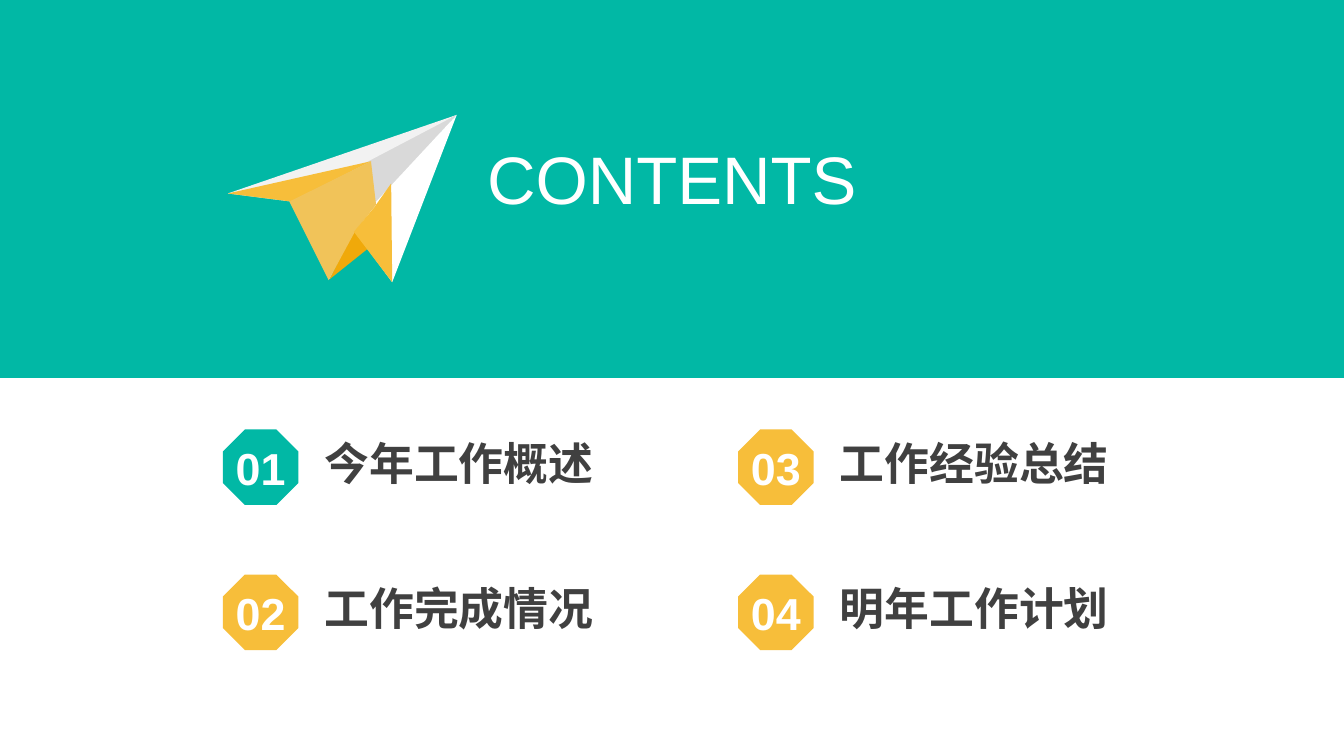
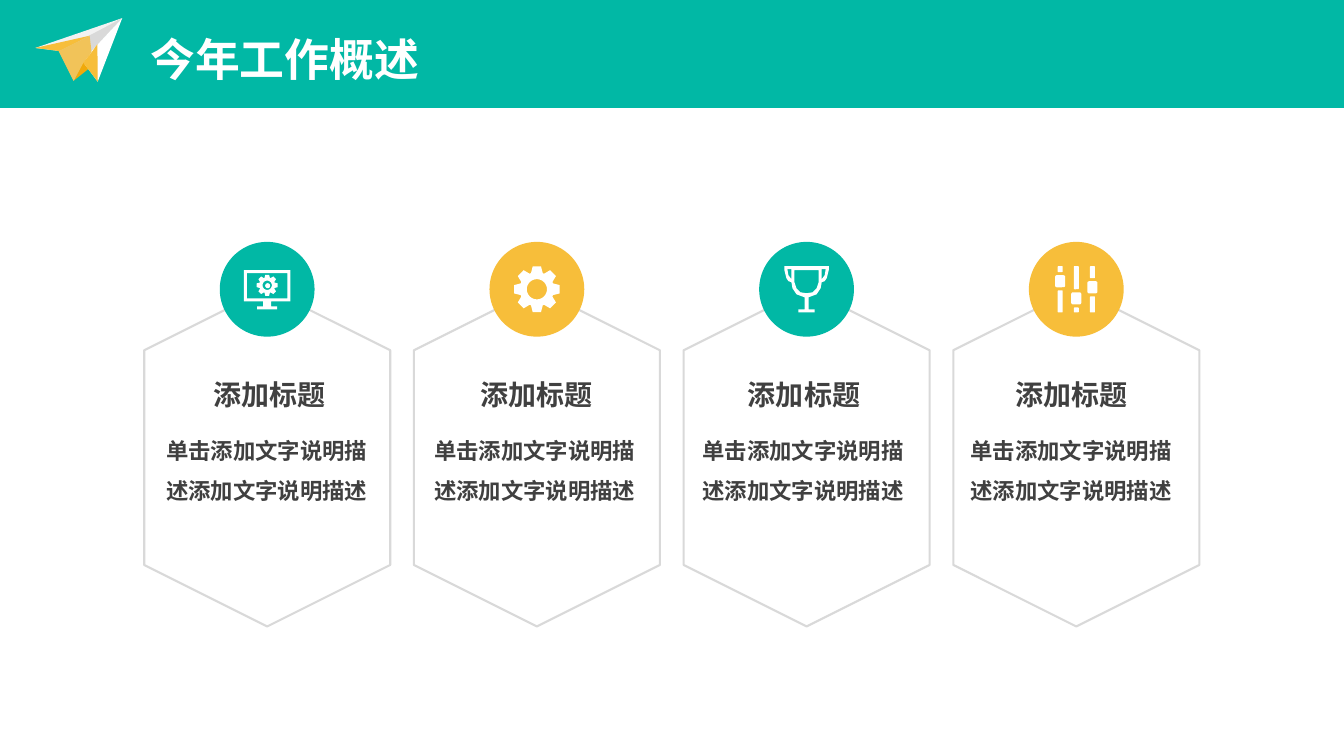
from math import cos, sin, pi
from pptx import Presentation
from pptx.dml.color import RGBColor
from pptx.enum.shapes import MSO_SHAPE
from pptx.enum.text import MSO_ANCHOR, MSO_AUTO_SIZE, PP_ALIGN
from pptx.util import Inches, Pt

HUES = {
    "teal": "01B8A5", "gold": "F7BE3A", "amber": "F0A90A", "sand": "F1C359",
    "white": "FFFFFF", "pale": "F2F2F2", "grey": "D9D9D9", "dark": "404040",
}


def add(shapes, form, hue, box=None, at=(0, 0), zoom=1):
    """Add a preset in a box, or one freeform from a list of outlines."""
    if box:
        shape = shapes.add_shape(form, *map(Inches, box))
    else:
        rings = [[(Inches(at[0] + x * zoom), Inches(at[1] + y * zoom))
                  for x, y in ring] for ring in form]
        pen = shapes.build_freeform(*rings[0][0])
        pen.add_line_segments(rings[0][1:])
        for ring in rings[1:]:
            pen.move_to(*ring[0])
            pen.add_line_segments(ring[1:])
        shape = pen.convert_to_shape()
    shape.shadow.inherit = False
    shape.fill.solid()
    shape.fill.fore_color.rgb = RGBColor.from_string(HUES[hue])
    shape.line.fill.background()
    return shape


def write(shape, text, size, hue, bold=True, align=PP_ALIGN.LEFT, wrap=False):
    frame = shape.text_frame
    frame.text = text
    frame.word_wrap = wrap
    frame.auto_size = MSO_AUTO_SIZE.NONE
    para = frame.paragraphs[0]
    para.alignment = align
    para.font.name = "Arial"
    para.font.size = Pt(size)
    para.font.bold = bold
    para.font.color.rgb = RGBColor.from_string(HUES[hue])
    return para


deck = Presentation()
deck.slide_width, deck.slide_height = Inches(13.33), Inches(7.5)

# Paper plane, in inches from its left end and its tip
PLANE = [
    ("grey", [(2.27, 0), (0.6, 0.81), (1.01, 1.63), (1.26, 1.12)]),
    ("amber", [(1.26, 1.12), (1.01, 1.63), (1.41, 1.31)]),
    ("white", [(2.27, 0), (1.23, 1.12), (1.63, 1.66)]),
    ("pale", [(2.27, 0), (0, 0.78), (0.63, 0.86)]),
    ("gold", [(0.63, 0.86), (1.42, 0.46), (0, 0.78)]),
    ("sand", [(0.61, 0.86), (1.42, 0.46), (1.47, 0.89), (1.26, 1.16),
              (1, 1.64)]),
    ("gold", [(1.25, 1.16), (1.45, 0.92), (1.62, 0.68), (1.63, 1.66)]),
]

# Band, plane and title of each slide
HEADS = [
    ("CONTENTS", 48, False, PP_ALIGN.CENTER, (3.82, 1.31, 5.69, 0.91),
     3.75, (2.26, 1.14), 1),
    ("今年工作概述", 32, True, PP_ALIGN.LEFT, (1.39, 0.26, 2.89, 0.64),
     1.07, (0.35, 0.18), 0.38),
]
for text, size, bold, align, box, tall, at, zoom in HEADS:
    slide = deck.slides.add_slide(deck.slide_layouts[5])
    title = slide.shapes.title
    band = add(slide.shapes, MSO_SHAPE.RECTANGLE, "teal", (0, 0, 13.33, tall))
    title._element.addprevious(band._element)
    title.left, title.top, title.width, title.height = map(Inches, box)
    write(title, text, size, "white", bold, align)
    plane = slide.shapes.add_group_shape()
    for hue, fold in PLANE:
        add(plane.shapes, [fold], hue, at=at, zoom=zoom)
first, second = deck.slides

# Contents list: two columns, filled downwards
shapes = first.shapes
TOPICS = ["今年工作概述", "工作完成情况", "工作经验总结", "明年工作计划"]
for i, topic in enumerate(TOPICS):
    left, top = 2.21 + i // 2 * 5.11, 4.26 + i % 2 * 1.44
    badge = add(shapes, MSO_SHAPE.OCTAGON, "gold" if i else "teal",
                (left, top, 0.75, 0.75))
    write(badge, f"{i + 1:02}", 32, "white", align=PP_ALIGN.CENTER)
    badge.text_frame.vertical_anchor = MSO_ANCHOR.MIDDLE
    label = shapes.add_textbox(*map(Inches, (left + 0.91, top + 0.01,
                                             2.89, 0.64)))
    write(label, topic, 32, "dark")

# Icon outlines, in inches from the centre of their disc
teeth = [(r * cos(k * pi / 4 + turn), r * sin(k * pi / 4 + turn))
         for k in range(8)
         for r, turn in ((0.17, -0.35), (0.23, -0.18), (0.23, 0.18),
                         (0.17, 0.35))]
hole = [(0.1 * cos(k * pi / 16), 0.1 * sin(k * pi / 16)) for k in range(32)]
gear = [teeth, hole]
screen = [
    [(-0.23, -0.19), (0.23, -0.19), (0.23, 0.12), (-0.23, 0.12)],
    [(-0.2, -0.16), (0.2, -0.16), (0.2, 0.09), (-0.2, 0.09)],
    [(-0.04, 0.12), (0.04, 0.12), (0.04, 0.17), (0.1, 0.17), (0.1, 0.2),
     (-0.1, 0.2), (-0.1, 0.17), (-0.04, 0.17)],
]
rim = [(0.22, -0.23), (0.22, -0.19), (0.2, -0.11), (0.18, -0.08),
       (0.15, -0.07), (0.14, -0.01), (0.1, 0.05), (0.02, 0.08), (0.02, 0.2),
       (0.08, 0.2), (0.08, 0.23)]
bowl = [(0.12, -0.19), (0.12, -0.07), (0.1, -0.01), (0.06, 0.03), (0, 0.04)]
grip = [(0.15, -0.2), (0.19, -0.2), (0.18, -0.14), (0.15, -0.1)]
cup = [half + [(-x, y) for x, y in reversed(half)] for half in (rim, bowl)]
cup += [grip, [(-x, y) for x, y in grip]]

# Four cards
shapes = second.shapes
STEP, MID = 2.675, 2.87
spots = [2.65 + i * STEP for i in range(4)]
for x in spots:
    card = add(shapes, MSO_SHAPE.HEXAGON, "white",
               (x - 1.675, 3.32, 3.35, 2.44))
    card.rotation = 90
    card.fill.background()
    card.line.color.rgb = RGBColor.from_string(HUES["grey"])
    card.line.width = Pt(1.5)
for i, x in enumerate(spots):
    add(shapes, MSO_SHAPE.OVAL, ("teal", "gold")[i % 2],
        (x - 0.47, MID - 0.47, 0.94, 0.94))
    head = shapes.add_textbox(*map(Inches, (2.01 + i * 2.65, 3.7, 1.32, 0.44)))
    write(head, "添加标题", 20, "dark", align=PP_ALIGN.RIGHT)
    body = shapes.add_textbox(*map(Inches, (1.53 + i * 2.66, 4.15,
                                            2.23, 0.87)))
    para = write(body, "单击添加文字说明描述添加文字说明描述", 16, "dark",
                 align=PP_ALIGN.CENTER, wrap=True)
    para.line_spacing = 1.5

for form, x in zip((screen, gear, cup), spots):
    add(shapes, form, "white", at=(x, MID))
add(shapes, gear, "white", at=(spots[0], 2.83), zoom=0.46)
add(shapes, MSO_SHAPE.OVAL, "white", (spots[0] - 0.02, 2.81, 0.05, 0.05))

# Sliders: a knob on a bar that is cut around it
for i, top in enumerate((2.73, 2.9, 2.79)):
    x = spots[3] + (i - 1) * 0.16
    for wide, y, end in ((0.05, 2.64, top - 0.03), (0.1, top, top + 0.12),
                         (0.05, top + 0.15, 3.1)):
        add(shapes, MSO_SHAPE.ROUNDED_RECTANGLE, "white",
            (x - wide / 2, y, wide, end - y))

deck.save("out.pptx")
